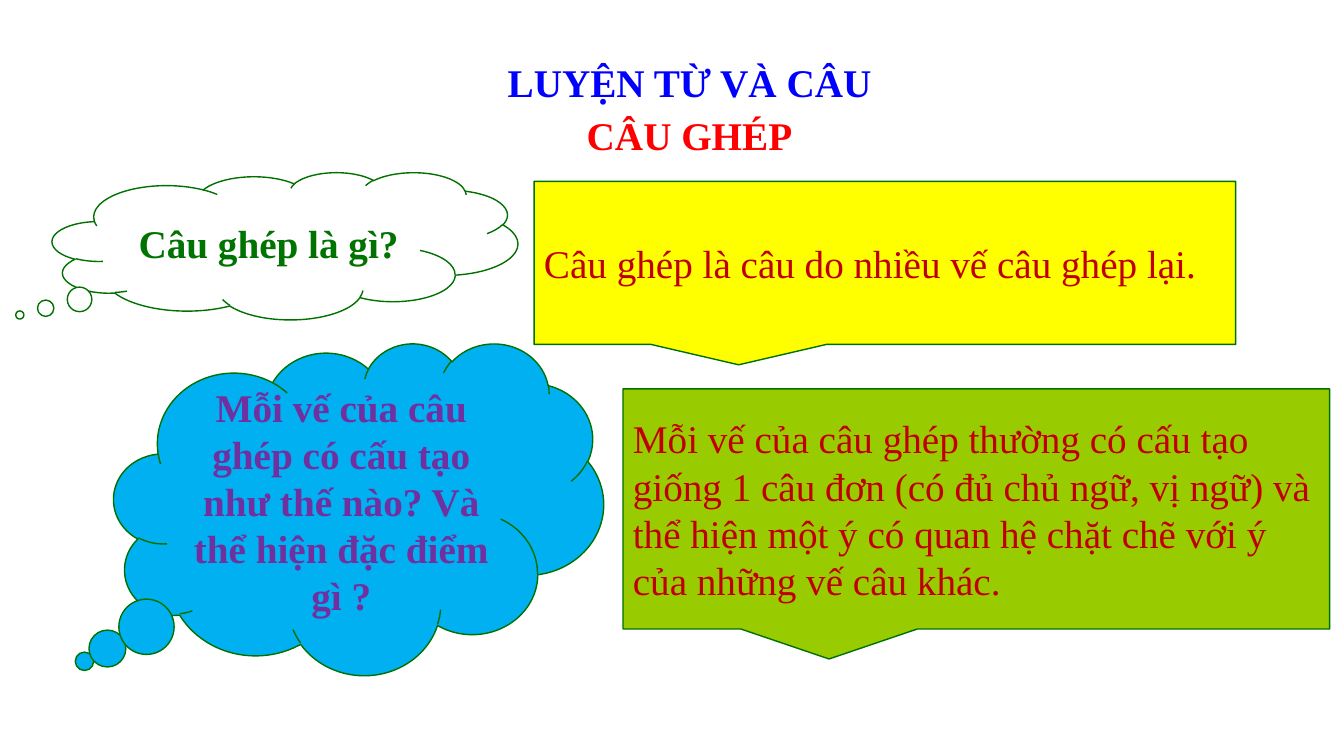
from pptx import Presentation
from pptx.dml.color import RGBColor
from pptx.enum.shapes import MSO_SHAPE
from pptx.enum.text import MSO_ANCHOR, MSO_AUTO_SIZE, PP_ALIGN
from pptx.util import Cm, Pt

WHITE = RGBColor(0xFF, 0xFF, 0xFF)
BLUE = RGBColor(0x00, 0x00, 0xFF)
RED = RGBColor(0xFF, 0x00, 0x00)
DARK_RED = RGBColor(0xC0, 0x00, 0x00)
GREEN = RGBColor(0x00, 0x73, 0x00)
OUTLINE_GREEN = RGBColor(0x00, 0x71, 0x00)
LIME = RGBColor(0x99, 0xCC, 0x00)
YELLOW = RGBColor(0xFF, 0xFF, 0x00)
SKY = RGBColor(0x00, 0xB0, 0xF0)
PURPLE = RGBColor(0x70, 0x30, 0xA0)


class LessonSlide:
    """Holds the lesson style and the slide being filled."""

    font_name = "Times New Roman"
    font_size = Pt(28)

    def __init__(self, slide):
        self.slide = slide

    def set_wording(self, frame, text, color, bold, align, anchor):
        frame.text = text
        frame.word_wrap = True
        frame.auto_size = MSO_AUTO_SIZE.NONE
        frame.vertical_anchor = anchor
        paragraph = frame.paragraphs[0]
        paragraph.alignment = align
        paragraph.space_before = Pt(0)
        font = paragraph.runs[0].font
        font.name = self.font_name
        font.size = self.font_size
        font.bold = bold
        font.color.rgb = color

    def heading(self, placeholder, top, text, color):
        placeholder.left, placeholder.top = Cm(11.28), Cm(top)
        placeholder.width, placeholder.height = Cm(12.19), Cm(1.45)
        self.set_wording(placeholder.text_frame, text, color, True, PP_ALIGN.CENTER, MSO_ANCHOR.TOP)

    def callout(self, preset, box, fill, text, color, bold, align):
        callout = self.slide.shapes.add_shape(preset, *map(Cm, box))
        callout.shadow.inherit = False
        callout.fill.solid()
        callout.fill.fore_color.rgb = fill
        callout.line.color.rgb = OUTLINE_GREEN
        callout.line.width = Pt(1)
        self.set_wording(callout.text_frame, text, color, bold, align, MSO_ANCHOR.MIDDLE)
        return callout

    def question(self, box, tail, fill, text, color):
        cloud = self.callout(MSO_SHAPE.CLOUD_CALLOUT, box, fill, text, color, True, PP_ALIGN.CENTER)
        cloud.adjustments[0], cloud.adjustments[1] = tail

    def answer(self, box, fill, text):
        self.callout(MSO_SHAPE.RECTANGULAR_CALLOUT, box, fill, text, DARK_RED, False, PP_ALIGN.LEFT)


def main():
    presentation = Presentation()
    presentation.slide_width = Cm(33.87)
    presentation.slide_height = Cm(19.05)
    slide = presentation.slides.add_slide(presentation.slide_layouts[0])
    lesson = LessonSlide(slide)

    lesson.heading(slide.shapes.title, 1.35, "LUYỆN TỪ VÀ CÂU", BLUE)
    lesson.heading(slide.placeholders[1], 2.67, "CÂU GHÉP", RED)

    lesson.question((1.32, 4.34, 11.73, 3.71), (-0.57, 0.47), WHITE, "Câu ghép là gì?", GREEN)
    lesson.answer((13.46, 4.57, 17.68, 4.11), YELLOW, "Câu ghép là câu do nhiều vế câu ghép lại.")
    lesson.question(
        (2.87, 8.64, 12.34, 8.36), (-0.56, 0.46), SKY,
        "Mỗi vế của câu ghép có cấu tạo như thế nào? Và thể hiện đặc điểm gì ?", PURPLE,
    )
    lesson.answer(
        (15.7, 9.8, 17.81, 6.05), LIME,
        "Mỗi vế của câu ghép thường có cấu tạo giống 1 câu đơn (có đủ chủ ngữ, vị ngữ) "
        "và thể hiện một ý có quan hệ chặt chẽ với ý của những vế câu khác.",
    )
    presentation.save("out.pptx")


if __name__ == "__main__":
    main()
